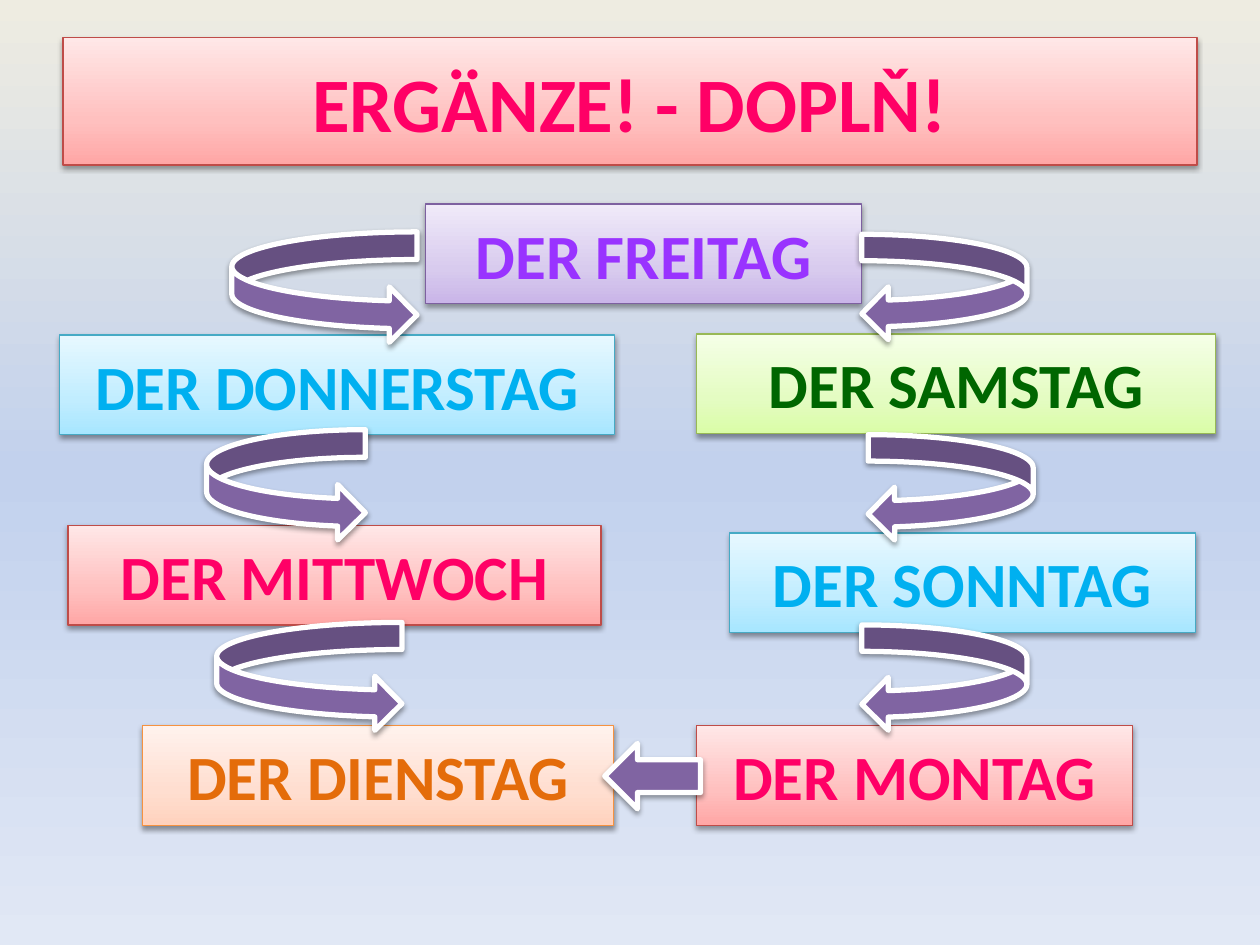
from lxml import etree
from pptx import Presentation
from pptx.dml.color import RGBColor
from pptx.enum import shapes, text
from pptx.oxml import ns
from pptx.util import Inches, Pt

FONT = "Calibri"
COLORS = {
    "pink": "FF0066", "violet": "9933FF", "green": "006600",
    "blue": "00B0F0", "orange": "E46C0A", "arrow": "8064A2", "white": "FFFFFF",
}
BORDERS = {
    "pink": "BF4C48", "violet": "7D60A0", "green": "98B955",
    "blue": "46AAC5", "orange": "F69240",
}
GRADIENTS = {
    "pink": ("FFA6A5", "FFC0BF", "FFE7E7"),
    "violet": ("C9B5E8", "D8CBEE", "F0EAF9"),
    "green": ("DAFDA7", "E4FCC2", "F5FFE7"),
    "blue": ("A7E6FF", "C1EDFF", "E7F8FF"),
    "orange": ("FFD2BD", "FFDED0", "FFF2ED"),
    "background": ("EEECE1", "C2D1ED", "E1E8F5"),
}
DAYS = [
    ("DER FREITAG", "violet", (3.38, 1.62, 3.46, 0.79)),
    ("DER SAMSTAG", "green", (5.53, 2.65, 4.12, 0.79)),
    ("DER SONNTAG", "blue", (5.79, 4.23, 3.7, 0.79)),
    ("DER MONTAG", "pink", (5.53, 5.76, 3.46, 0.79)),
    ("DER DONNERSTAG", "blue", (0.47, 2.66, 4.41, 0.79)),
    ("DER MITTWOCH", "pink", (0.54, 4.17, 4.23, 0.79)),
    ("DER DIENSTAG", "orange", (1.13, 5.76, 3.74, 0.79)),
]
ARROWS = [
    ("CURVED_LEFT_ARROW", (6.84, 1.86, 1.31, 0.84)),
    ("CURVED_LEFT_ARROW", (6.89, 3.45, 1.31, 0.84)),
    ("CURVED_LEFT_ARROW", (6.84, 4.96, 1.31, 0.84)),
    ("CURVED_RIGHT_ARROW", (1.84, 1.84, 1.47, 0.88)),
    ("CURVED_RIGHT_ARROW", (1.64, 3.41, 1.26, 0.88)),
    ("CURVED_RIGHT_ARROW", (1.72, 4.94, 1.47, 0.86)),
    ("LEFT_ARROW", (4.8, 5.9, 0.76, 0.52)),
]


def add_element(parent, tag, **attrs):
    """Append a DrawingML element and return it."""
    return etree.SubElement(parent, ns.qn(tag), attrs)


def set_gradient(fill, props, name, middle, angle):
    """Fill with a named three-stop linear gradient."""
    fill.solid()
    solid = props.find(ns.qn("a:solidFill"))
    grad = etree.Element(ns.qn("a:gradFill"), rotWithShape="1")
    stops = add_element(grad, "a:gsLst")
    for pos, color in zip((0, middle, 100), GRADIENTS[name]):
        stop = add_element(stops, "a:gs", pos=str(pos * 1000))
        add_element(stop, "a:srgbClr", val=color)
    add_element(grad, "a:lin", ang=str(angle * 60000), scaled="0")
    props.replace(solid, grad)


def add_shape(s, kind, box, line, width):
    """Add a preset shape with an outline and a soft shadow below it."""
    sp = s.shapes.add_shape(kind, *map(Inches, box))
    sp.line.color.rgb = RGBColor.from_string(line)
    sp.line.width = Pt(width)
    sp.shadow.inherit = False
    effects = sp._element.spPr.find(ns.qn("a:effectLst"))
    shadow = add_element(effects, "a:outerShdw", blurRad=str(Pt(3.1)), dist=str(Pt(1.6)),
                         dir="5400000", rotWithShape="0")
    color = add_element(shadow, "a:srgbClr", val="000000")
    add_element(color, "a:alpha", val="38000")
    return sp


def set_text(sp, content, *, size, color):
    """Write one bold centred line into a shape."""
    tf = sp.text_frame
    tf.word_wrap = True
    tf.vertical_anchor = text.MSO_ANCHOR.MIDDLE
    p = tf.paragraphs[0]
    p.alignment = text.PP_ALIGN.CENTER
    r = p.add_run()
    r.text = content
    r.font.name = FONT
    r.font.size = Pt(size)
    r.font.bold = True
    r.font.color.rgb = RGBColor.from_string(COLORS[color])


def add_card(s, content, color, box, size=36):
    """Add a gradient card with its caption."""
    sp = add_shape(s, shapes.MSO_SHAPE.RECTANGLE, box, BORDERS[color], 0.75)
    set_gradient(sp.fill, sp._element.spPr, color, 35, 270)
    set_text(sp, content, size=size, color=color)


def add_arrow(s, kind, box):
    """Add a block arrow leading from one day to another."""
    sp = add_shape(s, shapes.MSO_SHAPE[kind], box, COLORS["white"], 3)
    sp.fill.solid()
    sp.fill.fore_color.rgb = RGBColor.from_string(COLORS["arrow"])


def main():
    """Build the weekday slide and save it."""
    prs = Presentation()
    prs.slide_width, prs.slide_height = Inches(10), Inches(7.5)
    s = prs.slides.add_slide(prs.slide_layouts[6])
    fill = s.background.fill
    fill.solid()
    set_gradient(fill, s._element.xpath(".//p:bgPr")[0], "background", 50, 90)
    add_card(s, "ERGÄNZE! - DOPLŇ!", "pink", (0.5, 0.3, 9, 1.01), size=44)
    for day in DAYS:
        add_card(s, *day)
    for arrow in ARROWS:
        add_arrow(s, *arrow)
    prs.save("out.pptx")


if __name__ == "__main__":
    main()
